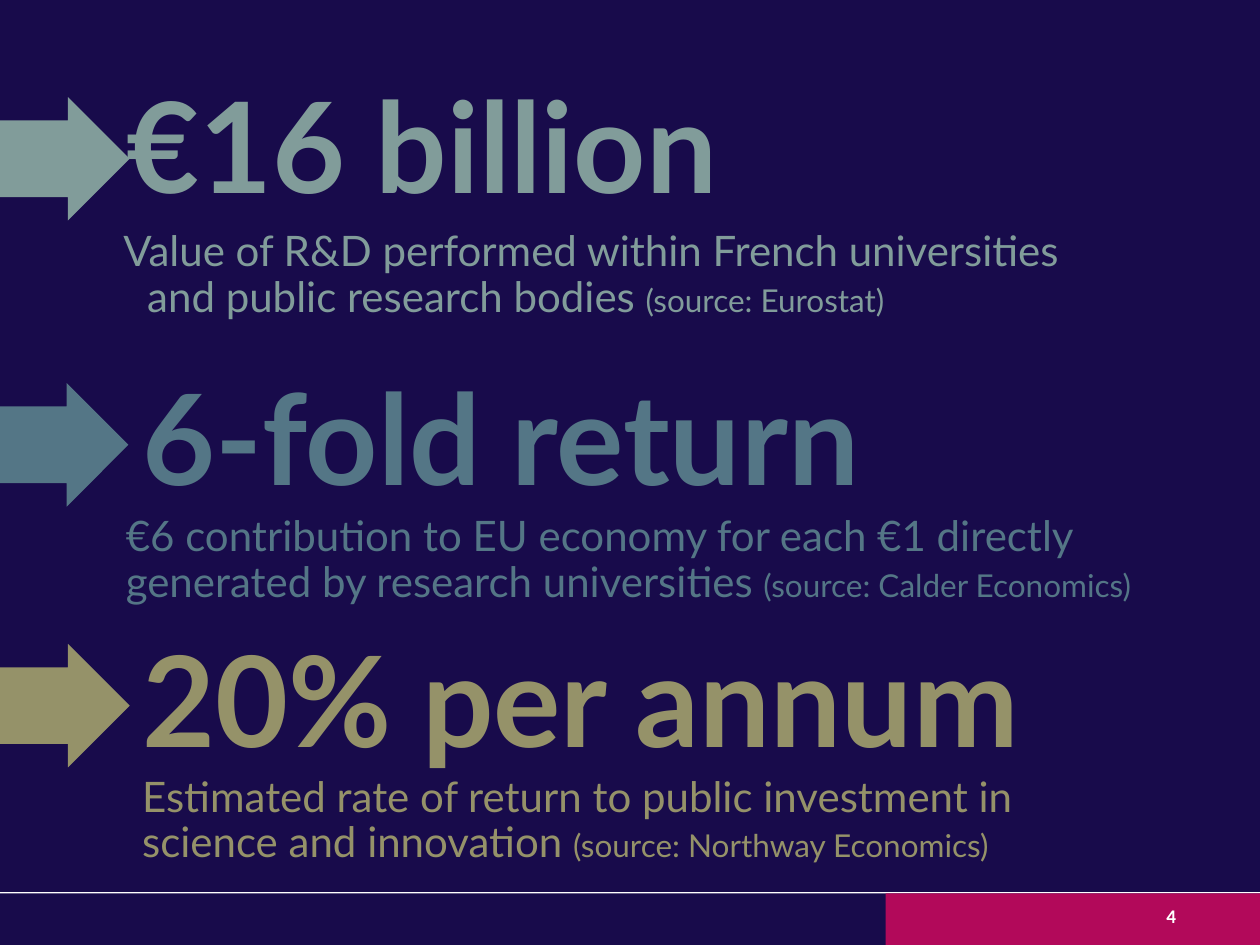
from dataclasses import dataclass

from pptx import Presentation
from pptx import util as u
from pptx.dml.color import RGBColor
from pptx.enum import shapes, text

PX = 9144  # EMU in one px, 100 px to the inch


@dataclass(frozen=True)
class Theme:
    navy: str = "180B4B"
    magenta: str = "B2095A"
    white: str = "FFFFFF"
    sage: str = "819C9A"
    teal: str = "547686"
    olive: str = "959269"
    font: str = "Lato"
    number_font: str = "Calibri"
    headline: int = 72
    caption: int = 24
    source: int = 18
    number: int = 11


THEME = Theme()


@dataclass(frozen=True)
class Fact:
    """One figure; boxes are left, top, width, height relative to the arrow row."""
    top: int
    arrow_left: int
    color: str
    headline: str
    headline_box: tuple
    caption: str
    source: str
    caption_box: tuple
    hanging: int = 0


FACTS = [
    Fact(77, 0, THEME.sage, "€16 billion", (90, -23, 920, 131),
         "Value of R&D performed within French universities and public research bodies ",
         "(source: Eurostat)", (88, 96, 822, 89), hanging=19),
    Fact(304, -1, THEME.teal, "6-fold return", (103, -18, 822, 131),
         "€6 contribution to EU economy for each €1 directly generated by research universities ",
         "(source: Calder Economics)", (90, 95, 822, 68)),
    Fact(511, 0, THEME.olive, "20% per annum", (103, -17, 822, 131),
         "Estimated rate of return to public investment in science and innovation ",
         "(source: Northway Economics)", (103, 95, 822, 68)),
]


def emu(*lengths):
    return [u.Emu(length * PX) for length in lengths]


def add_block(slide, kind, box, color, outline=0):
    block = slide.shapes.add_shape(kind, *emu(*box))
    block.shadow.inherit = False
    block.fill.solid()
    block.fill.fore_color.rgb = RGBColor.from_string(color)
    if outline:
        block.line.color.rgb = RGBColor.from_string(color)
        block.line.width = u.Pt(outline)
    else:
        block.line.fill.background()
    return block


def add_run(paragraph, words, size, color, font=THEME.font, bold=False):
    run = paragraph.add_run()
    run.text = words
    run.font.name = font
    run.font.size = u.Pt(size)
    run.font.bold = bold
    run.font.color.rgb = RGBColor.from_string(color)


def set_text_frame(holder, box, anchor, inset=10):
    """Places the holder and returns its first paragraph, ready for runs."""
    holder.left, holder.top, holder.width, holder.height = emu(*box)
    frame = holder.text_frame
    frame.word_wrap = True
    frame.auto_size = text.MSO_AUTO_SIZE.NONE
    frame.vertical_anchor = anchor
    (frame.margin_left, frame.margin_top,
     frame.margin_right, frame.margin_bottom) = emu(*[inset] * 4)
    paragraph = frame.paragraphs[0]
    paragraph.alignment = text.PP_ALIGN.LEFT
    paragraph.line_spacing = 0.9
    paragraph.space_before = u.Pt(0)
    return paragraph


def add_text_holder(slide):
    return slide.shapes.add_textbox(0, 0, PX, PX)


def add_fact(slide, fact, headline_holder):
    def place(box):
        left, top, width, height = box
        return left, fact.top + top, width, height

    headline = set_text_frame(headline_holder, place(fact.headline_box),
                              text.MSO_ANCHOR.BOTTOM)
    add_run(headline, fact.headline, THEME.headline, fact.color, bold=True)

    caption = set_text_frame(add_text_holder(slide), place(fact.caption_box),
                             text.MSO_ANCHOR.TOP)
    if fact.hanging:
        properties = caption._p.get_or_add_pPr()
        properties.set("marL", str(fact.hanging * PX))
        properties.set("indent", str(-fact.hanging * PX))
    add_run(caption, fact.caption, THEME.caption, fact.color)
    add_run(caption, fact.source, THEME.source, fact.color)

    arrow = add_block(slide, shapes.MSO_SHAPE.RIGHT_ARROW,
                      place((fact.arrow_left, 0, 103, 98)), fact.color)
    arrow.adjustments[0] = 0.62
    arrow.adjustments[1] = 0.5


def add_background(slide):
    rectangle = shapes.MSO_SHAPE.RECTANGLE
    add_block(slide, rectangle, (0, 709, 1000, 41), THEME.navy)
    add_block(slide, rectangle, (703, 709, 297, 41), THEME.magenta)
    add_block(slide, rectangle, (1, 0, 1000, 707), THEME.navy, outline=2)


def add_page_number(slide, number):
    paragraph = set_text_frame(add_text_holder(slide), (916, 713, 60, 40),
                               text.MSO_ANCHOR.TOP)
    paragraph.line_spacing = 1.0
    frame_margin = u.Emu(5 * PX)
    slide.shapes[-1].text_frame.margin_top = frame_margin
    add_run(paragraph, number, THEME.number, THEME.white,
            font=THEME.number_font, bold=True)


def main():
    deck = Presentation()
    deck.slide_width, deck.slide_height = emu(1000, 750)
    slide = deck.slides.add_slide(deck.slide_layouts[5])
    title = slide.shapes.title
    add_background(slide)
    # The title comes first in the tree, so it is raised above the panels.
    slide.shapes._spTree.append(title._element)
    for index, fact in enumerate(FACTS):
        add_fact(slide, fact, add_text_holder(slide) if index else title)
    add_page_number(slide, "4")
    deck.save("out.pptx")


if __name__ == "__main__":
    main()
